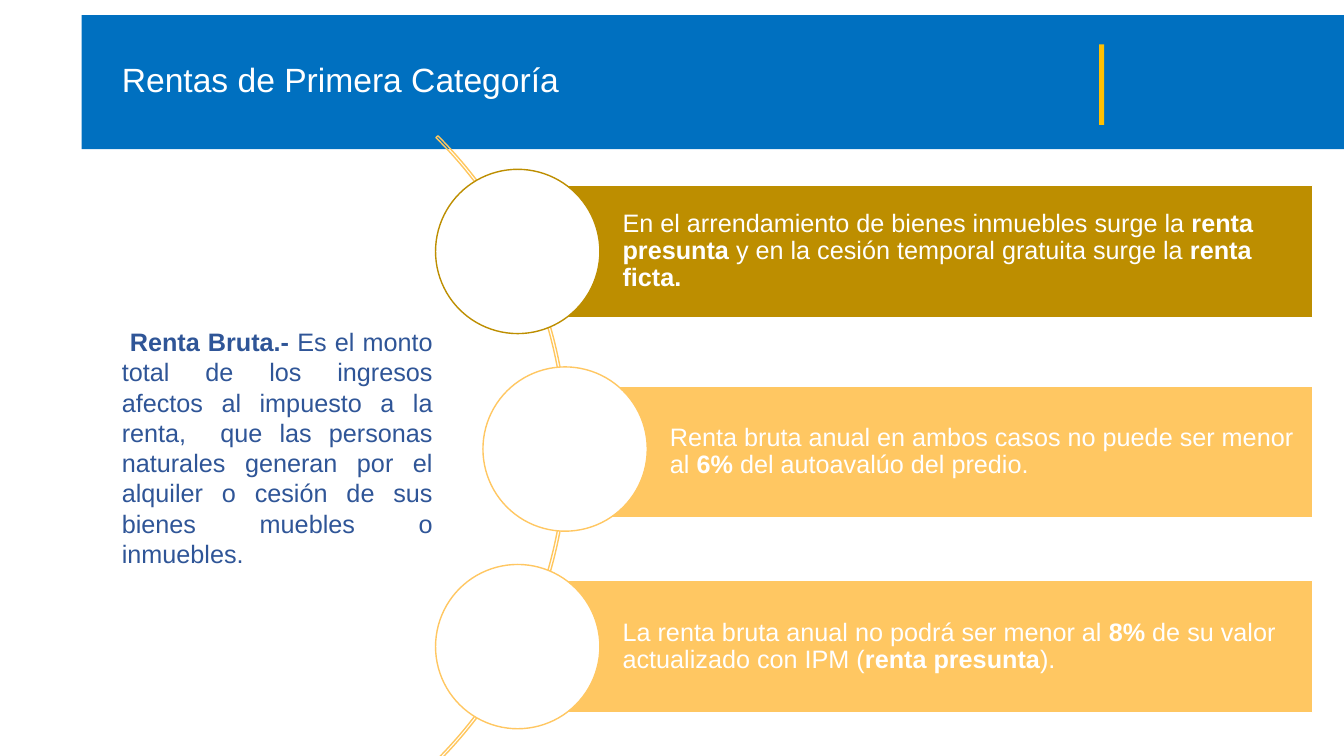
from dataclasses import dataclass

from pptx import Presentation
from pptx.dml.color import RGBColor
from pptx.enum.shapes import MSO_SHAPE
from pptx.enum.text import MSO_ANCHOR, PP_ALIGN
from pptx.util import Inches, Pt


@dataclass(frozen=True)
class Theme:
    font: str = "Arial"
    title_size: int = 24
    body_size: int = 18
    white: str = "FFFFFF"
    band: str = "0070C0"
    accent: str = "FFC000"
    definition: str = "2F5597"
    arc: str = "FFC75E"
    dark_gold: str = "BD8E00"
    light_gold: str = "FFC762"


theme = Theme()


def add_box(kind, left, top, width, height, fill=None, line=None):
    """Add a preset shape; None leaves its fill or line empty."""
    sp = s.shapes.add_shape(kind, Inches(left), Inches(top), Inches(width), Inches(height))
    sp.shadow.inherit = False
    for part, color in ((sp.fill, fill), (sp.line.fill, line)):
        if color:
            part.solid()
            part.fore_color.rgb = RGBColor.from_string(color)
        else:
            part.background()
    if line:
        sp.line.width = Pt(1)
    return sp


def write(sp, runs, size, color, anchor=MSO_ANCHOR.MIDDLE, align=PP_ALIGN.LEFT, spacing=0.9):
    """Fill a shape with one paragraph of (text, bold) runs."""
    tf = sp.text_frame
    tf.word_wrap = True
    tf.vertical_anchor = anchor
    p = tf.paragraphs[0]
    p.alignment = align
    p.line_spacing = spacing
    for text, bold in runs:
        r = p.add_run()
        r.text = text
        r.font.name = theme.font
        r.font.size = Pt(size)
        r.font.bold = bold
        r.font.color.rgb = RGBColor.from_string(color)


prs = Presentation()
prs.slide_width = Inches(13.33)
prs.slide_height = Inches(7.5)
s = prs.slides.add_slide(prs.slide_layouts[6])

# Header
add_box(MSO_SHAPE.RECTANGLE, 0.81, 0.15, 12.52, 1.33, fill=theme.band)
add_box(MSO_SHAPE.RECTANGLE, 10.9, 0.44, 0.05, 0.8, fill=theme.accent)
title = s.shapes.add_textbox(Inches(1.11), Inches(0.18), Inches(9), Inches(1.25))
write(title, [("Rentas de Primera Categoría", False)], theme.title_size, theme.white)

# Definition
definition = add_box(MSO_SHAPE.RECTANGLE, 1.11, 3.19, 3.28, 2.52, theme.white, theme.white)
write(definition, [
    (" Renta Bruta.- ", True),
    ("Es el monto total de los ingresos afectos al impuesto a la renta,  que las personas "
     "naturales generan por el alquiler o cesión de sus bienes muebles o inmuebles.", False),
], theme.body_size, theme.definition, MSO_ANCHOR.TOP, PP_ALIGN.JUSTIFY, 1.0)

# Curved list
arc = add_box(MSO_SHAPE.BLOCK_ARC, -3.16, 0.06, 8.79, 8.79, line=theme.arc)
for i, value in enumerate((189, 27, 0.003)):
    arc.adjustments[i] = value

DIAMETER = 1.63
FIRST_CIRCLE_TOP, CIRCLE_PITCH = 1.68, 1.96
BAR_RIGHT, BAR_HEIGHT = 13.02, 1.31
rules = [  # circle left, bar top, color, runs
    (4.32, 1.84, theme.dark_gold, [
        ("En el arrendamiento de bienes inmuebles surge la ", False),
        ("renta presunta ", True),
        ("y en la cesión temporal gratuita surge la ", False),
        ("renta ficta.", True)]),
    (4.79, 3.83, theme.light_gold, [
        ("Renta bruta anual en ambos casos no puede ser menor al ", False),
        ("6%", True),
        (" del autoavalúo del predio.", False)]),
    (4.32, 5.76, theme.light_gold, [
        ("La renta bruta anual no podrá ser menor al ", False),
        ("8%", True),
        (" de su valor actualizado con IPM (", False),
        ("renta presunta", True),
        (").", False)]),
]
for i, (circle_left, bar_top, color, runs) in enumerate(rules):
    bar_left = circle_left + DIAMETER / 2
    bar = add_box(MSO_SHAPE.RECTANGLE, bar_left, bar_top, BAR_RIGHT - bar_left, BAR_HEIGHT,
                  color, theme.white)
    tf = bar.text_frame
    tf.margin_left = Inches(1.04)
    tf.margin_top = tf.margin_right = tf.margin_bottom = Inches(0.05)
    write(bar, runs, theme.body_size, theme.white)
    add_box(MSO_SHAPE.OVAL, circle_left, FIRST_CIRCLE_TOP + i * CIRCLE_PITCH,
            DIAMETER, DIAMETER, theme.white, color)

prs.save("out.pptx")
